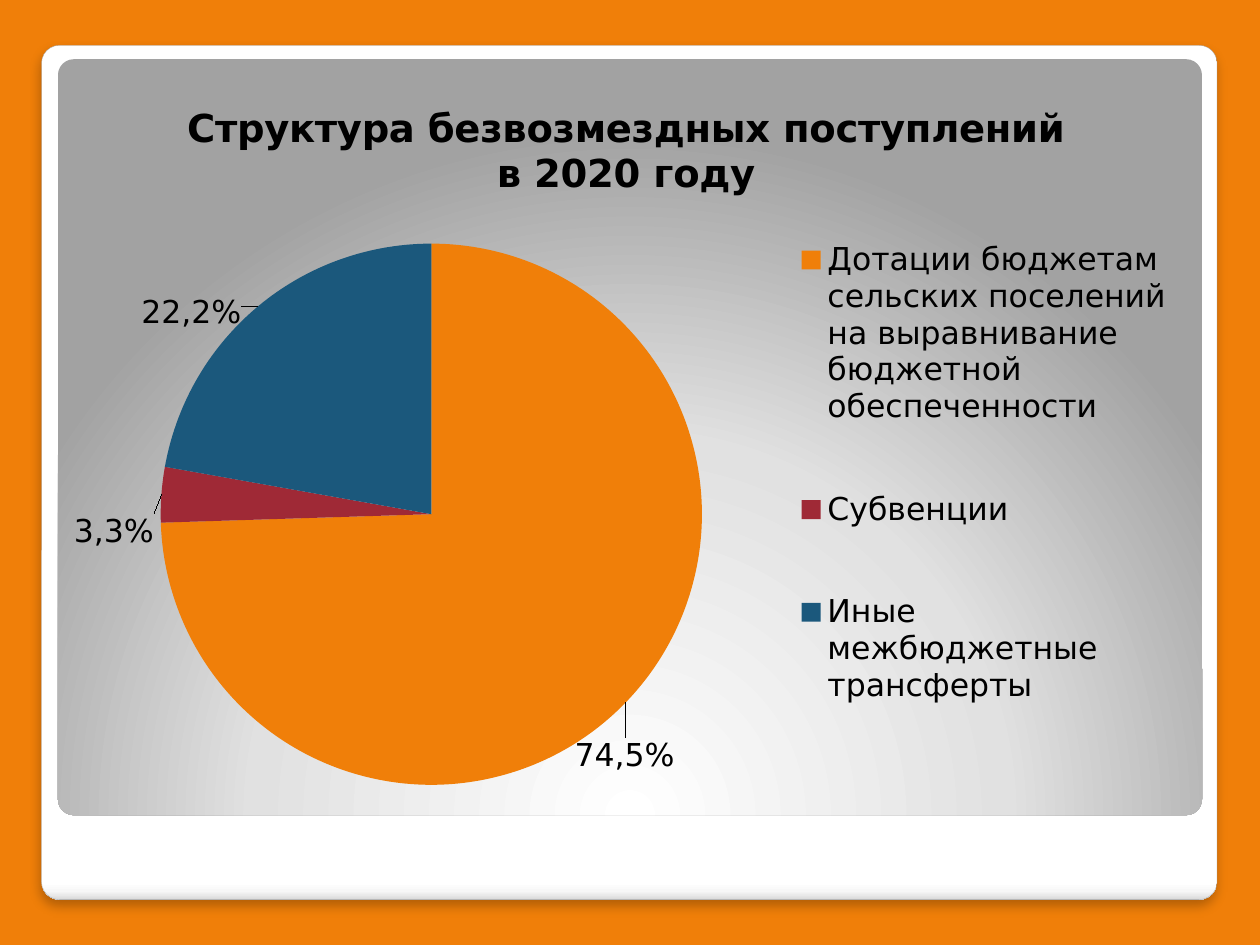
"""Build the slide with a pie chart of grant revenue in 2020."""
import lxml.etree
import pptx
import pptx.chart.data
import pptx.dml.color
import pptx.enum.chart
import pptx.enum.shapes
import pptx.oxml
import pptx.oxml.ns
import pptx.util

TITLE = ["Структура безвозмездных поступлений", "в 2020 году"]
SHARES = [
    {"name": "Дотации бюджетам сельских поселений на выравнивание бюджетной обеспеченности",
     "value": 74.5, "color": "F07F09", "shift": (-0.05, 0.04)},
    {"name": "Субвенции", "value": 3.3, "color": "9F2936", "shift": (0, 0.05)},
    {"name": "Иные межбюджетные трансферты", "value": 22.2, "color": "1B587C",
     "shift": (-0.01, 0.04)},
]
FRAME = {
    "box": (0.33, 0.36, 9.33, 6.78),
    "stops": [(0, "FFFFFF"), (98, "FFFFFF"), (99, "F7F7F7"), (100, "DADADA")],
    "direction": '<a:lin ang="5400000" scaled="0"/>',
}
PANEL = {
    "box": (0.46, 0.47, 9.08, 6),
    "stops": [(0, "FFFFFF"), (55, "E1E1E1"), (100, "A2A2A2")],
    "direction": '<a:path path="circle"><a:fillToRect l="50000" t="175000" '
                 'r="50000" b="-75000"/></a:path>',
}
CHART_BOX = (0.47, 0.56, 8.95, 5.97)
FONT = "DejaVu Sans"
A_NS = pptx.oxml.ns.nsdecls("a")


def rgb(color):
    return pptx.dml.color.RGBColor.from_string(color)


def inches(box):
    return [pptx.util.Inches(n) for n in box]


def set_font(font, size=18, bold=False, color="000000"):
    font.name, font.size, font.bold = FONT, pptx.util.Pt(size), bold
    font.color.rgb = rgb(color)


def put_text(tf, lines, **style):
    for i, line in enumerate(lines):
        p = tf.add_paragraph() if i else tf.paragraphs[0]
        r = p.add_run()
        r.text = line
        set_font(r.font, **style)


def add_panel(s, box, stops, direction):
    sp = s.shapes.add_shape(pptx.enum.shapes.MSO_SHAPE.ROUNDED_RECTANGLE, *inches(box))
    sp.adjustments[0] = 0.021
    sp.shadow.inherit = False
    sp.line.fill.background()
    marks = "".join(f'<a:gs pos="{pos * 1000}"><a:srgbClr val="{color}"/></a:gs>'
                    for pos, color in stops)
    sp.element.spPr.insert(2, pptx.oxml.parse_xml(
        f'<a:gradFill {A_NS} rotWithShape="1"><a:gsLst>{marks}</a:gsLst>{direction}</a:gradFill>'))
    return sp


def add_shadow(sp):
    effects = sp.element.spPr.find(pptx.oxml.ns.qn("a:effectLst"))
    effects.append(pptx.oxml.parse_xml(
        f'<a:outerShdw {A_NS} blurRad="76200" dist="50800" dir="5400000" rotWithShape="0">'
        '<a:srgbClr val="000000"><a:alpha val="25000"/></a:srgbClr></a:outerShdw>'))


def set_layout(parent, index, target=None, **values):
    qn = pptx.oxml.ns.qn
    for old in parent.findall(qn("c:layout")):
        parent.remove(old)
    layout = lxml.etree.Element(qn("c:layout"))
    manual = lxml.etree.SubElement(layout, qn("c:manualLayout"))
    settings = {"layoutTarget": target} if target else {}
    if index == 0 or "w" in values or "mode" in values:
        settings.update(xMode="edge", yMode="edge")
    settings.update((k, v) for k, v in values.items() if k != "mode")
    for tag, value in settings.items():
        lxml.etree.SubElement(manual, qn(f"c:{tag}")).set("val", str(value))
    parent.insert(index, layout)


def add_pie(s):
    data = pptx.chart.data.CategoryChartData()
    data.categories = [share["name"] for share in SHARES]
    data.add_series("Series 1", [share["value"] for share in SHARES])
    chart = s.shapes.add_chart(pptx.enum.chart.XL_CHART_TYPE.PIE, *inches(CHART_BOX), data).chart
    set_font(chart.font)

    chart.has_title = True
    put_text(chart.chart_title.text_frame, TITLE, size=22, bold=True)
    chart.chart_title.include_in_layout = False
    set_layout(chart.chart_title._element, 1, mode="edge", x=0.11, y=0.04)

    chart.has_legend = True
    chart.legend.position = pptx.enum.chart.XL_LEGEND_POSITION.RIGHT
    chart.legend.include_in_layout = False
    set_font(chart.legend.font)
    set_layout(chart.legend._element, 1, x=0.65, y=0.14, w=0.34, h=0.79)

    plot = chart.plots[0]
    plot.vary_by_categories = True
    set_layout(plot._element.getparent(), 0, target="inner", x=0.09, y=0.23, w=0.48, h=0.72)

    outside = pptx.enum.chart.XL_LABEL_POSITION.OUTSIDE_END
    series = plot.series[0]
    series.data_labels.show_value = True
    series.data_labels.position = outside
    for i, share in enumerate(SHARES):
        point = series.points[i]
        point.format.fill.solid()
        point.format.fill.fore_color.rgb = rgb(share["color"])
        label = point.data_label
        put_text(label.text_frame, [f"{share['value']}%".replace(".", ",")])
        label.position = outside
        x, y = share["shift"]
        set_layout(series.data_labels._element.findall(pptx.oxml.ns.qn("c:dLbl"))[i], 1, x=x, y=y)


def main():
    prs = pptx.Presentation()
    prs.slide_width, prs.slide_height = inches((10, 7.5))
    s = prs.slides.add_slide(prs.slide_layouts[6])
    s.background.fill.solid()
    s.background.fill.fore_color.rgb = rgb("F07F09")
    frame = add_panel(s, **FRAME)
    frame.line.color.rgb = rgb("A4A4A4")
    frame.line.width = pptx.util.Pt(0.16)
    add_shadow(frame)
    add_panel(s, **PANEL)
    add_pie(s)
    prs.save("out.pptx")


if __name__ == "__main__":
    main()
